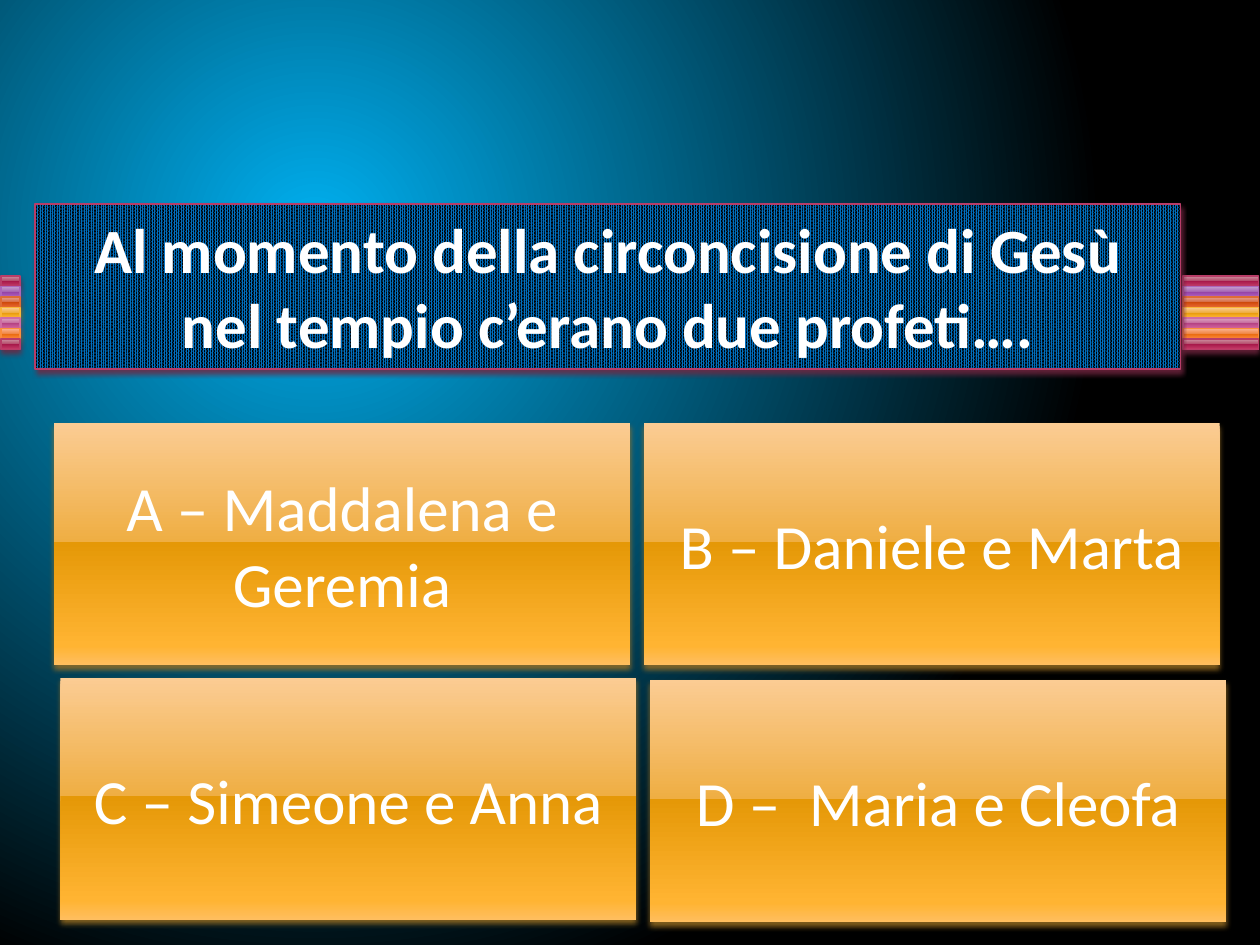
from pptx import Presentation
from pptx.dml.color import RGBColor as RGB
from pptx.enum.dml import MSO_PATTERN
from pptx.enum.shapes import MSO_SHAPE as SHAPE
from pptx.enum.text import MSO_ANCHOR as ANCHOR, MSO_AUTO_SIZE as AUTO, PP_ALIGN as ALIGN
from pptx.oxml.ns import qn
from pptx.oxml.xmlchemy import OxmlElement
from pptx.util import Inches, Pt

WHITE, BLACK = RGB(255, 255, 255), RGB(0, 0, 0)
SKY, NAVY = RGB(0x00, 0xB0, 0xF0), RGB(0x00, 0x70, 0xC0)
COLS, ROWS = 100, 75  # grid of the slide, in columns and rows
GLOSS = (0, 49, 49, 92, 100)  # stop positions of the glossy gradient


def tone(line, shadow, *stops):
    colours = [RGB.from_string(c) for c in stops]
    return {"line": RGB.from_string(line), "shadow": RGB.from_string(shadow),
            "stops": list(zip(GLOSS, colours))}


RED = tone("B83D68", "722640", "CE94A2", "B34869", "A61749", "C13764", "CA5D7C")
PURPLE = tone("AC66BB", "6A3F73", "C6A2D0", "A666B4", "8F3EA1", "AD5DBF", "BA76CA")
RUST = tone("DE6C36", "894321", "E7A493", "D66B42", "CC4809", "E9642C", "F07B55")
AMBER = tone("F9B639", "9A7023", "FBCC93", "EFAE43", "E59807", "FFB432", "FFBE5F")
PINK = tone("CF6DA4", "804365", "DDA4C1", "C66B9D", "B34181", "D361A0", "DC79AE")
ORANGE = tone("FA8D3D", "9A5726", "FBB494", "F08745", "E5670B", "FF8736", "FF9961")
STRIPES = (RED, PURPLE, RUST, AMBER, PINK, ORANGE, RED)

ANSWERS = (("A – Maddalena e Geremia", "B – Daniele e Marta"),
           ("C – Simeone e Anna", "D –  Maria e Cleofa"))


def add(parent, tag, **attrs):
    child = OxmlElement(tag)
    for name, value in attrs.items():
        child.set(name, str(value))
    parent.append(child)
    return child


def set_gradient(fill, owner, stops, radial=False):
    """Fill with any number of stops, downwards or as a circle."""
    fill.gradient()
    grad = owner.find(".//" + qn("a:gradFill"))
    for child in list(grad):
        grad.remove(child)
    stop_list = add(grad, "a:gsLst")
    for pos, colour in stops:
        stop = add(stop_list, "a:gs", pos=pos * 1000)
        add(stop, "a:srgbClr", val=colour)
    if radial:
        route = add(grad, "a:path", path="circle")
        add(route, "a:fillToRect", l=50000, t=50000, r=100000, b=100000)
    else:
        add(grad, "a:lin", ang=5400000, scaled=0)


def set_shadow(sp, colour):
    sp.shadow.inherit = False
    effects = sp.element.spPr.find(qn("a:effectLst"))
    shadow = add(effects, "a:outerShdw", blurRad=Pt(3.1), dist=Pt(2),
                 dir=5400000, algn="ctr", rotWithShape=0)
    add(add(shadow, "a:srgbClr", val=colour), "a:alpha", val=83000)


def add_block(slide, box, colours, outlined=True):
    """Glossy rectangle; box is left, top, width, height in grid units."""
    x, y, w, h = box
    col, row = Inches(10) / COLS, Inches(7.5) / ROWS
    sp = slide.shapes.add_shape(SHAPE.RECTANGLE, round(x * col), round(y * row),
                                round(w * col), round(h * row))
    set_gradient(sp.fill, sp.element, colours["stops"])
    if outlined:
        sp.line.color.rgb = colours["line"]
        sp.line.width = Pt(0.9)
    else:
        sp.line.fill.background()
    set_shadow(sp, colours["shadow"])
    return sp


def write(sp, text, bold=None):
    tf = sp.text_frame
    tf.word_wrap = True
    p = tf.paragraphs[0]
    p.alignment = ALIGN.CENTER
    r = p.add_run()
    r.text = text
    for name, value in {"name": "Calibri", "size": Pt(36), "bold": bold}.items():
        setattr(r.font, name, value)
    r.font.color.rgb = WHITE
    return tf


def add_stripes(slide, box):
    x, y, w, h = box
    step = h / len(STRIPES)
    for i, colours in enumerate(STRIPES):
        add_block(slide, (x, y + i * step, w, step), colours)


def add_answers(slide, box, gap=1.1, drift=0.5, drop=0.2):
    """Two by two answers; the lower row drifts right, its last one drops."""
    x, y, w, h = box
    cell_w, cell_h = (w - gap) / 2, (h - 1) / 2
    for i, row in enumerate(ANSWERS):
        for j, text in enumerate(row):
            place = (x + j * (cell_w + gap) + i * drift,
                     y + i * (cell_h + 1) + i * j * drop, cell_w, cell_h)
            sp = add_block(slide, place, AMBER, outlined=False)
            write(sp, text).vertical_anchor = ANCHOR.MIDDLE


def add_question(slide, box, text):
    sp = add_block(slide, box, RED)
    sp.fill.patterned()
    sp.fill.pattern = MSO_PATTERN.PERCENT_90
    sp.fill.fore_color.rgb, sp.fill.back_color.rgb = NAVY, BLACK
    tf = write(sp, text, bold=True)
    tf.auto_size = AUTO.SHAPE_TO_FIT_TEXT
    tf.vertical_anchor = ANCHOR.TOP


def main():
    prs = Presentation()
    prs.slide_width, prs.slide_height = Inches(10), Inches(7.5)
    slide = prs.slides.add_slide(prs.slide_layouts[6])
    set_gradient(slide.background.fill, slide.element,
                 [(0, SKY), (100, BLACK)], radial=True)
    add_stripes(slide, (0.1, 21.9, 1.5, 5.85))
    add_stripes(slide, (93.9, 21.9, 6, 5.85))
    add_answers(slide, (4.3, 33.6, 92.5, 39.4))
    add_question(slide, (2.8, 16.2, 90.9, 13.1),
                 "Al momento della circoncisione di Gesù nel tempio c’erano due profeti….")
    prs.save("out.pptx")


if __name__ == "__main__":
    main()
